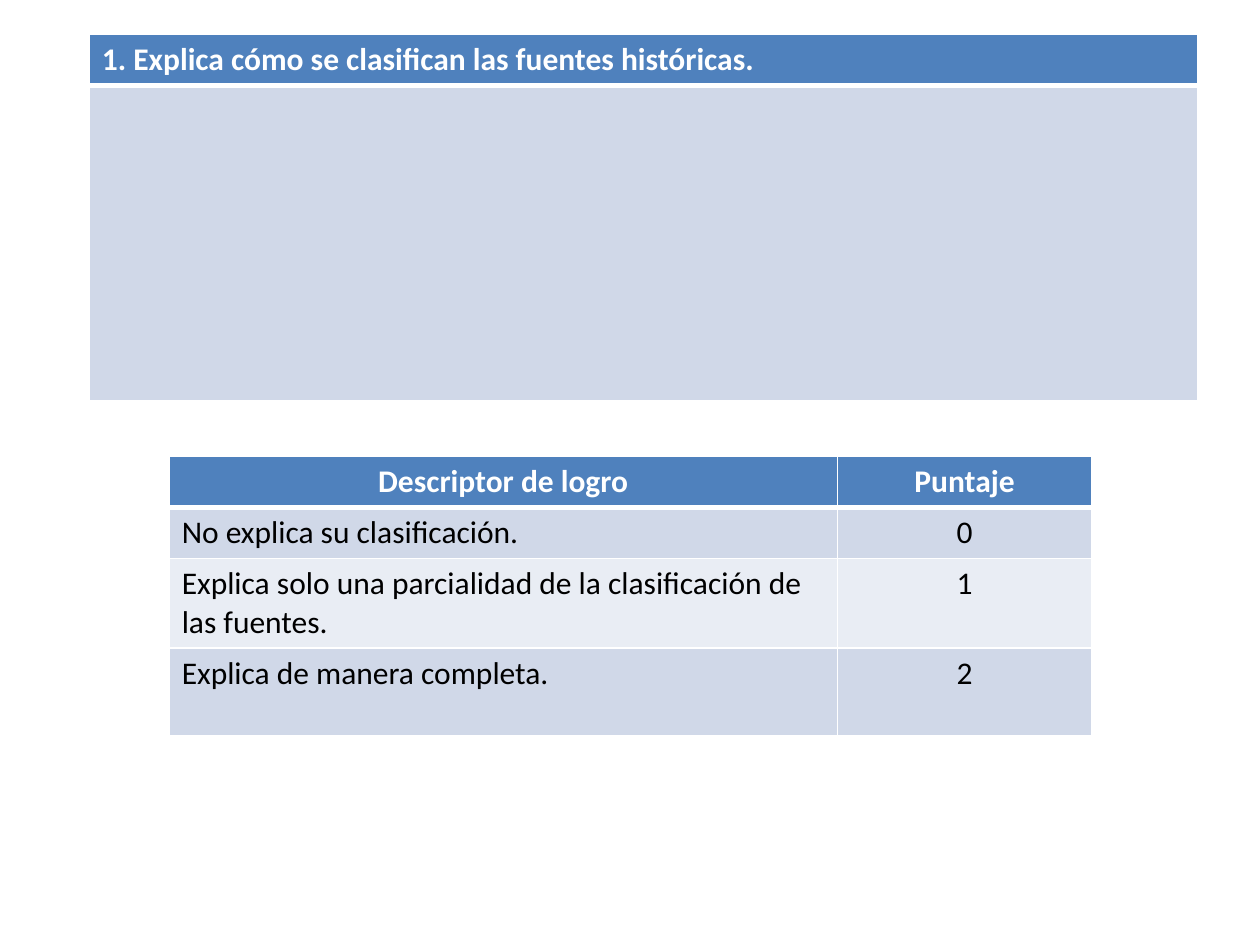
from dataclasses import dataclass

from lxml.etree import SubElement
from pptx import Presentation
from pptx.dml.color import RGBColor as Color
from pptx.enum.text import PP_ALIGN as Align
from pptx.oxml.ns import qn
from pptx.util import Cm, Pt


@dataclass(frozen=True)
class Theme:
    font: str = "Calibri"
    size: int = 18
    header: str = "4F81BD"
    bands: tuple = ("D0D8E8", "E9EDF4")
    white: str = "FFFFFF"
    black: str = "000000"
    thin: int = 1
    thick: int = 3


THEME = Theme()


def set_borders(cell, top, bottom):
    properties = cell._tc.get_or_add_tcPr()
    widths = {"lnL": THEME.thin, "lnR": THEME.thin, "lnT": top, "lnB": bottom}
    for side, width in widths.items():
        line = SubElement(properties, qn(f"a:{side}"), w=str(Pt(width)))
        fill = SubElement(line, qn("a:solidFill"))
        SubElement(fill, qn("a:srgbClr"), val=THEME.white)


def format_cell(cell, text, row, align):
    is_header = row == 0
    set_borders(
        cell,
        top=THEME.thick if row == 1 else THEME.thin,
        bottom=THEME.thick if is_header else THEME.thin,
    )
    cell.fill.solid()
    band = THEME.bands[(row - 1) % len(THEME.bands)]
    cell.fill.fore_color.rgb = Color.from_string(THEME.header if is_header else band)
    cell.text_frame.text = text
    para = cell.text_frame.paragraphs[0]
    para.alignment = align
    for span in para.runs:
        span.font.name = THEME.font
        span.font.size = Pt(THEME.size)
        span.font.bold = is_header
        span.font.color.rgb = Color.from_string(THEME.white if is_header else THEME.black)


def add_grid(page, left, top, widths, heights, rows, alignments):
    frame = page.shapes.add_table(
        len(rows), len(widths), Cm(left), Cm(top), Cm(sum(widths)), Cm(sum(heights))
    )
    table = frame.table
    for column, width in zip(table.columns, widths):
        column.width = Cm(width)
    for index, (height, texts) in enumerate(zip(heights, rows)):
        table.rows[index].height = Cm(height)
        for column, text in enumerate(texts):
            format_cell(table.cell(index, column), text, index, alignments[index][column])


def add_question(page, left, top, width, height):
    header_height = 1
    add_grid(
        page, left, top, [width], [header_height, height - header_height],
        [["1. Explica cómo se clasifican las fuentes históricas."], [""]],
        [[Align.LEFT]] * 2,
    )


def add_rubric(page, left, top, width, height):
    score_width = 5.13
    single = 1.03
    double = (height - 2 * single) / 2
    rows = [
        ["Descriptor de logro", "Puntaje"],
        ["No explica su clasificación.", "0"],
        ["Explica solo una parcialidad de la clasificación de las fuentes.", "1"],
        ["Explica de manera completa.", "2"],
    ]
    add_grid(
        page, left, top, [width - score_width, score_width],
        [single, single, double, double], rows,
        [[Align.CENTER] * 2] + [[Align.LEFT, Align.CENTER]] * 3,
    )


def main():
    deck = Presentation()
    deck.slide_width, deck.slide_height = Cm(25.4), Cm(19.05)
    page = deck.slides.add_slide(deck.slide_layouts.get_by_name("Blank"))
    add_question(page, 1.8, 0.69, 22.35, 7.35)
    add_rubric(page, 3.41, 9.2, 18.6, 5.6)
    deck.save("out.pptx")


if __name__ == "__main__":
    main()
